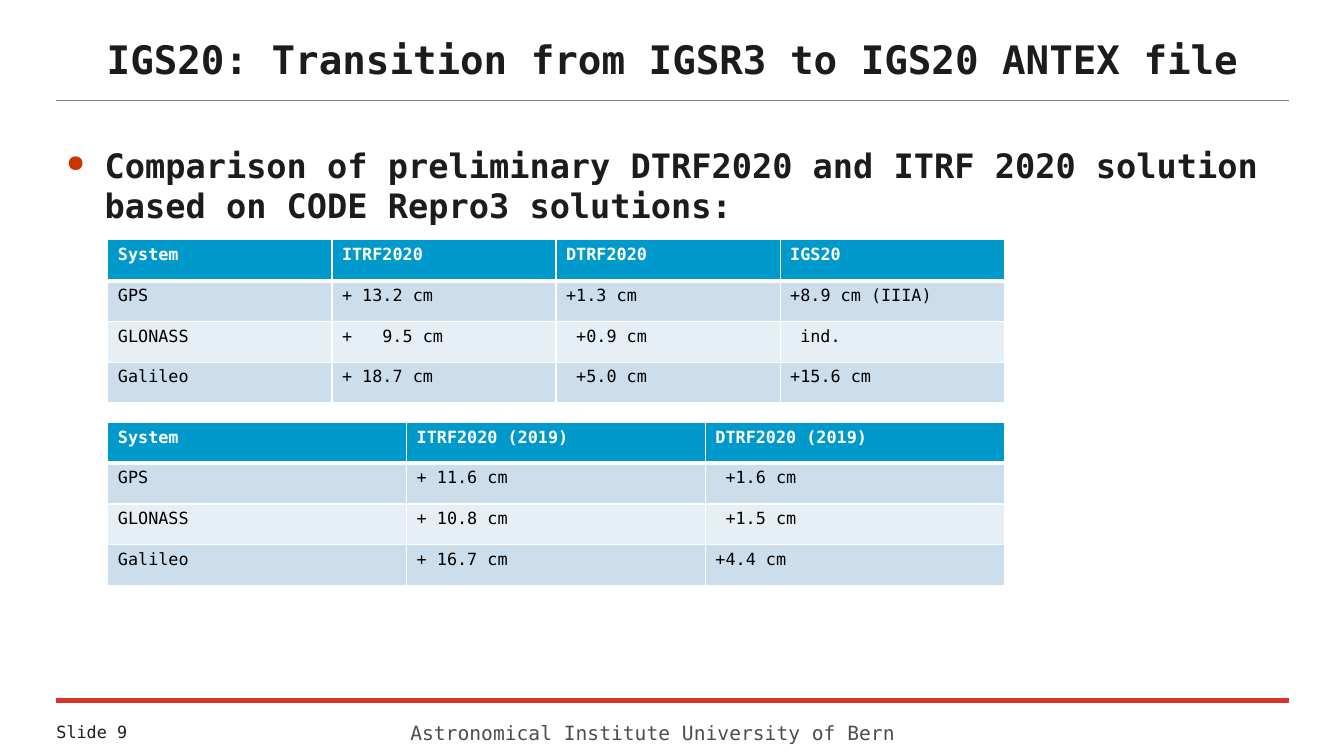
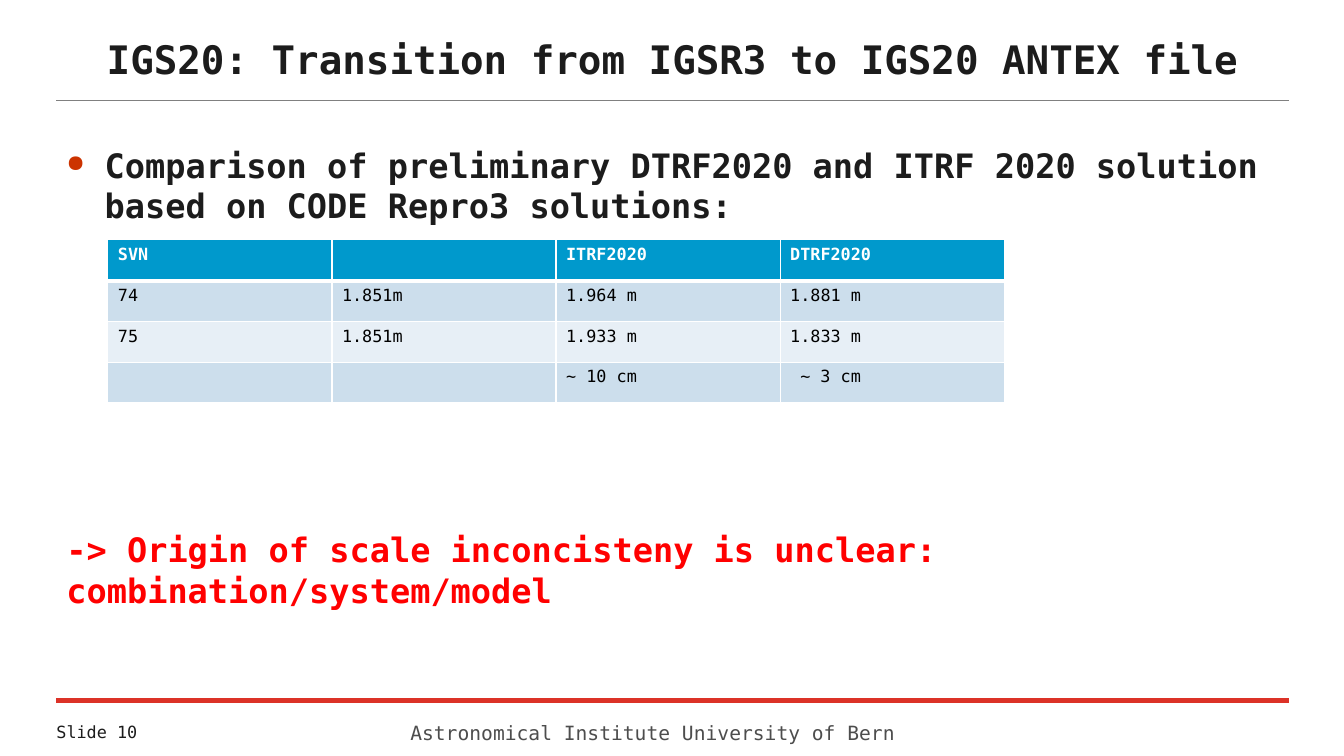
import pptx
import pptx.util
import pptx.dml.color
import pptx.enum.shapes
import pptx.enum.text
import pptx.oxml
import pptx.oxml.ns
from lxml import etree

Inches = pptx.util.Inches
Pt = pptx.util.Pt
qn = pptx.oxml.ns.qn

FONT = "DejaVu Sans Mono"
INK, GREY, WHITE, BLACK = "1C1C1C", "4D4D4D", "FFFFFF", "000000"
RULE_GREY, RULE_RED, WARNING_RED, BULLET_RED = "808080", "DC3228", "FF0000", "CC3300"
HEADER_BLUE, BAND_DARK, BAND_LIGHT = "0099CC", "CCDEEC", "E7EFF6"

LEFT, WIDTH = 0.56, 12.22
TABLE_LEFT, TABLE_WIDTH, TABLE_HEIGHT = 1.07, 8.89, 1.62
CHAR_WIDTH = 0.1  # one 12 pt monospaced character, in inches

TITLE = "IGS20: Transition from IGSR3 to IGS20 ANTEX file"
STATEMENT = ("Comparison of preliminary DTRF2020 and ITRF 2020 solution "
             "based on CODE Repro3 solutions:")
CONCLUSION = "-> Origin of scale inconcisteny is unclear: combination/system/model"
FOOTER = "Astronomical Institute University of Bern"

SLIDES = [
    {"number": 9, "conclusion": None, "tables": [
        (2.38, [["System", "ITRF2020", "DTRF2020", "IGS20"],
                ["GPS", "+ 13.2 cm", "+1.3 cm", "+8.9 cm (IIIA)"],
                ["GLONASS", "+\t9.5 cm", " +0.9 cm", " ind."],
                ["Galileo", "+ 18.7 cm", " +5.0 cm", "+15.6 cm"]]),
        (4.19, [["System", "ITRF2020 (2019)", "DTRF2020 (2019)"],
                ["GPS", "+ 11.6 cm", " +1.6 cm"],
                ["GLONASS", "+ 10.8 cm", " +1.5 cm"],
                ["Galileo", "+ 16.7 cm", "+4.4 cm"]]),
    ]},
    {"number": 10, "conclusion": CONCLUSION, "tables": [
        (2.38, [["SVN", "", "ITRF2020", "DTRF2020"],
                ["74", "1.851m", "1.964 m", "1.881 m"],
                ["75", "1.851m", "1.933 m", "1.833 m"],
                ["", "", "~ 10 cm", " ~ 3 cm"]]),
    ]},
]


def rgb(value):
    return pptx.dml.color.RGBColor.from_string(value)


def write(frame, text, size, color, bold=False):
    """Fill a text frame with one styled paragraph and return the paragraph."""
    frame.word_wrap = True
    paragraph = frame.paragraphs[0]
    paragraph.text = text
    paragraph.font.name = FONT
    paragraph.font.size = Pt(size)
    paragraph.font.bold = bold
    paragraph.font.color.rgb = rgb(color)
    return paragraph


deck = pptx.Presentation()
deck.slide_width, deck.slide_height = Inches(13.33), Inches(7.5)

for content in SLIDES:
    page = deck.slides.add_slide(deck.slide_layouts[5])

    # Title, rules and footer
    title = page.shapes.title
    title.left, title.top = Inches(LEFT), Inches(0.25)
    title.width, title.height = Inches(WIDTH), Inches(0.67)
    title.text_frame.auto_size = pptx.enum.text.MSO_AUTO_SIZE.NONE
    title.text_frame.vertical_anchor = pptx.enum.text.MSO_ANCHOR.MIDDLE
    heading = write(title.text_frame, TITLE, 28, INK, bold=True)
    heading.alignment = pptx.enum.text.PP_ALIGN.CENTER

    for y, color, weight in [(1, RULE_GREY, 1), (6.95, RULE_RED, 4)]:
        rule = page.shapes.add_connector(
            pptx.enum.shapes.MSO_CONNECTOR.STRAIGHT,
            Inches(LEFT), Inches(y), Inches(LEFT + WIDTH), Inches(y))
        rule.line.color.rgb = rgb(color)
        rule.line.width = Pt(weight)
        etree.SubElement(rule._element.spPr, qn("a:effectLst"))

    number_box = page.shapes.add_textbox(Inches(LEFT), Inches(7.16), Inches(1.51), Inches(0.2))
    footer_box = page.shapes.add_textbox(Inches(4.07), Inches(7.03), Inches(5.27), Inches(0.42))
    for box, inset in [(number_box, 0), (footer_box, 0.05)]:
        frame = box.text_frame
        frame.margin_left = frame.margin_right = 0
        frame.margin_top = frame.margin_bottom = Inches(inset)
    write(number_box.text_frame, f"Slide {content['number']}", 12, INK)
    footer = write(footer_box.text_frame, FOOTER, 14, GREY)
    footer.line_spacing = 1.3

    # Statement with its bullet, and the conclusion
    statement_box = page.shapes.add_textbox(Inches(LEFT), Inches(1.39), Inches(WIDTH), Inches(0.9))
    properties = statement_box.text_frame.paragraphs[0]._p.get_or_add_pPr()
    properties.set("marL", str(Inches(0.38)))
    properties.set("indent", str(-Inches(0.38)))
    bullet_color = etree.SubElement(properties, qn("a:buClr"))
    etree.SubElement(bullet_color, qn("a:srgbClr"), val=BULLET_RED)
    etree.SubElement(properties, qn("a:buSzPct"), val="70000")
    etree.SubElement(properties, qn("a:buChar"), char="●")
    write(statement_box.text_frame, STATEMENT, 24, INK, bold=True)

    if content["conclusion"]:
        conclusion_box = page.shapes.add_textbox(
            Inches(LEFT), Inches(5.2), Inches(WIDTH), Inches(0.9))
        write(conclusion_box.text_frame, content["conclusion"], 24, WARNING_RED, bold=True)

    # Tables
    for top, rows in content["tables"]:
        columns = len(rows[0])
        table = page.shapes.add_table(
            len(rows), columns, Inches(TABLE_LEFT), Inches(top),
            Inches(TABLE_WIDTH), Inches(TABLE_HEIGHT)).table
        for column in table.columns:
            column.width = Inches(TABLE_WIDTH / columns)

        for row_index, row in enumerate(rows):
            is_header = row_index == 0
            band = BAND_DARK if row_index % 2 else BAND_LIGHT
            for column_index, text in enumerate(row):
                cell = table.cell(row_index, column_index)
                cell.fill.solid()
                cell.fill.fore_color.rgb = rgb(HEADER_BLUE if is_header else band)

                properties = cell.text_frame.paragraphs[0]._p.get_or_add_pPr()
                if text.startswith(" "):
                    properties.set("marL", str(Inches(CHAR_WIDTH)))
                if "\t" in text:
                    tabs = etree.SubElement(properties, qn("a:tabLst"))
                    etree.SubElement(tabs, qn("a:tab"), pos=str(Inches(4 * CHAR_WIDTH)), algn="l")
                write(cell.text_frame, text.strip(), 12,
                      WHITE if is_header else BLACK, bold=is_header)

                weights = {"lnL": 1, "lnR": 1,
                           "lnT": 3 if row_index == 1 else 1,
                           "lnB": 3 if is_header else 1}
                cell_properties = cell._tc.get_or_add_tcPr()
                for position, (side, weight) in enumerate(weights.items()):
                    border = etree.Element(qn(f"a:{side}"), w=str(Pt(weight)))
                    border_fill = etree.SubElement(border, qn("a:solidFill"))
                    etree.SubElement(border_fill, qn("a:srgbClr"), val=WHITE)
                    cell_properties.insert(position, border)

deck.save("out.pptx")
